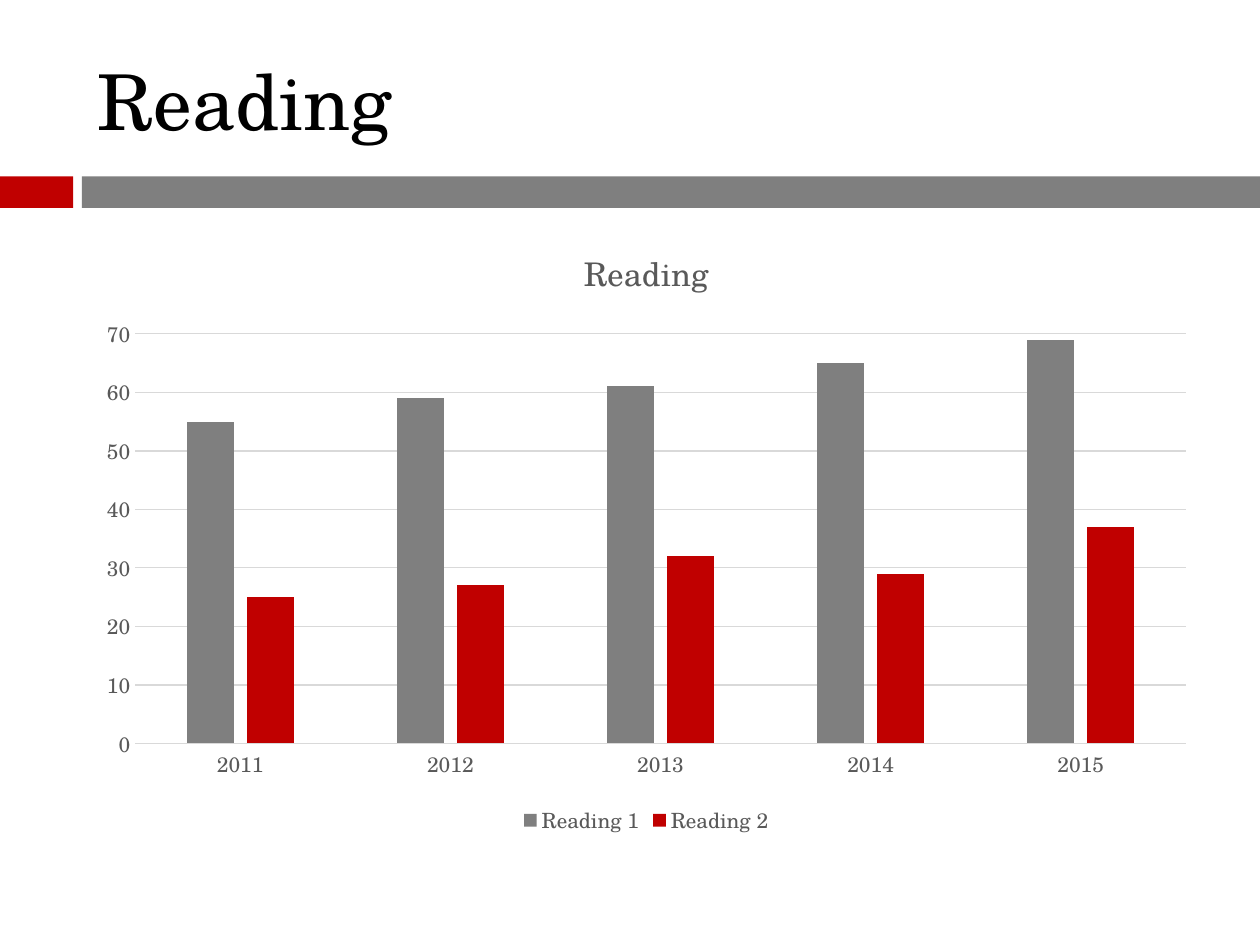
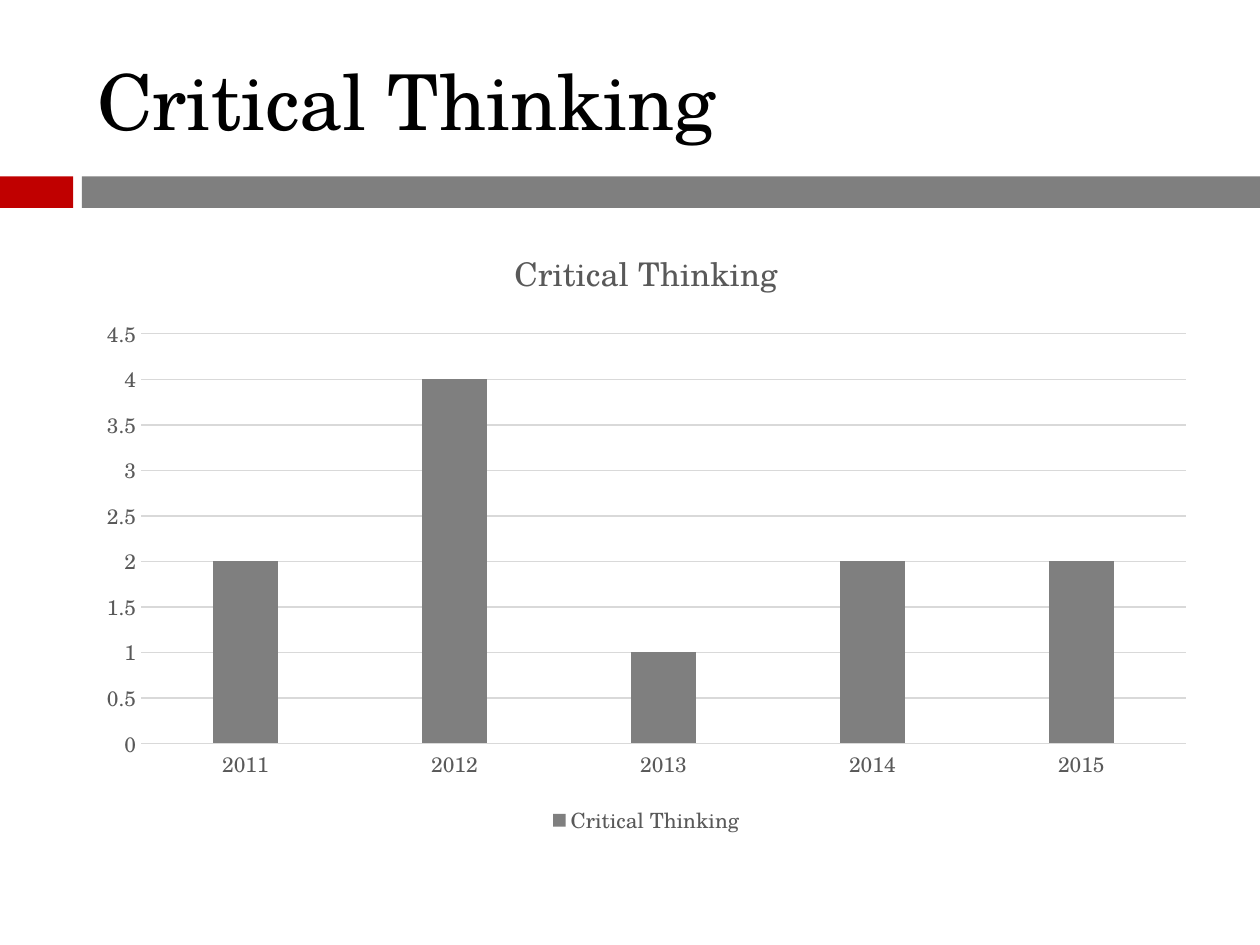
"""Build two slides of yearly assessment results as clustered column charts."""
from pptx import Presentation
from pptx.chart.data import CategoryChartData
from pptx.dml.color import RGBColor
from pptx.enum.chart import XL_CHART_TYPE, XL_LEGEND_POSITION, XL_TICK_MARK
from pptx.enum.shapes import MSO_SHAPE
from pptx.enum.text import MSO_ANCHOR, PP_ALIGN
from pptx.util import Inches, Pt

YEARS = ["2011", "2012", "2013", "2014", "2015"]
RESULTS = [
    {"title": "Reading", "top": 70, "step": 10,
     "series": {"Reading 1": (55, 59, 61, 65, 69),
                "Reading 2": (25, 27, 32, 29, 37)}},
    {"title": "Critical Thinking", "top": 4.5, "step": 0.5,
     "series": {"Critical Thinking": (2, 4, 1, 2, 2)}},
]

FONT = "TeX Gyre Schola"
BLACK = RGBColor(0x00, 0x00, 0x00)
RED = RGBColor(0xC0, 0x00, 0x00)
GRAY = RGBColor(0x7F, 0x7F, 0x7F)
LABEL = RGBColor(0x59, 0x59, 0x59)
GRID = RGBColor(0xD9, 0xD9, 0xD9)
SERIES_COLORS = (GRAY, RED)

CLUSTERED = XL_CHART_TYPE.COLUMN_CLUSTERED
BOTTOM = XL_LEGEND_POSITION.BOTTOM
NO_TICK = XL_TICK_MARK.NONE
RECTANGLE = MSO_SHAPE.RECTANGLE
MIDDLE = MSO_ANCHOR.MIDDLE
LEFT = PP_ALIGN.LEFT

WIDTH, HEIGHT = 10, 7.5
MARGIN, CONTENT_WIDTH = 0.67, 8.92
TITLE_TOP, TITLE_HEIGHT = 0.25, 1.08
CHART_TOP, CHART_HEIGHT = 1.75, 4.92
BAND_TOP, BAND_HEIGHT = 1.4, 0.25
BANDS = [(0, 0.58, RED), (0.65, WIDTH - 0.65, GRAY)]


def style_font(font, size, color):
    font.name, font.size, font.bold = FONT, Pt(size), False
    font.color.rgb = color


def style_line(line):
    line.color.rgb = GRID
    line.width = Pt(0.75)


def add_bands(slide):
    for left, width, color in BANDS:
        band = slide.shapes.add_shape(
            RECTANGLE, Inches(left), Inches(BAND_TOP), Inches(width), Inches(BAND_HEIGHT))
        band.shadow.inherit = False
        band.fill.solid()
        band.fill.fore_color.rgb = color
        band.line.fill.background()


def set_title(slide, text):
    title = slide.shapes.title
    title.left, title.top = Inches(MARGIN), Inches(TITLE_TOP)
    title.width, title.height = Inches(CONTENT_WIDTH), Inches(TITLE_HEIGHT)
    frame = title.text_frame
    frame.text = text
    frame.vertical_anchor = MIDDLE
    heading = frame.paragraphs[0]
    heading.alignment = LEFT
    style_font(heading.runs[0].font, 44, BLACK)


def add_results_chart(slide, result):
    data = CategoryChartData()
    data.categories = YEARS
    for name, scores in result["series"].items():
        data.add_series(name, scores)
    chart = slide.shapes.add_chart(
        CLUSTERED, Inches(MARGIN), Inches(CHART_TOP),
        Inches(CONTENT_WIDTH), Inches(CHART_HEIGHT), data).chart
    style_font(chart.font, 10, BLACK)

    chart.has_title = True
    caption = chart.chart_title.text_frame
    caption.text = result["title"]
    style_font(caption.paragraphs[0].runs[0].font, 18.6, LABEL)
    chart.chart_title.include_in_layout = False

    chart.has_legend = True
    chart.legend.position = BOTTOM
    chart.legend.include_in_layout = False
    style_font(chart.legend.font, 12, LABEL)

    years, scale = chart.category_axis, chart.value_axis
    for axis in (years, scale):
        axis.major_tick_mark = axis.minor_tick_mark = NO_TICK
        style_font(axis.tick_labels.font, 12, LABEL)
    style_line(years.format.line)
    scale.format.line.fill.background()
    scale.minimum_scale, scale.maximum_scale = 0, result["top"]
    scale.major_unit = result["step"]
    style_line(scale.major_gridlines.format.line)

    plot = chart.plots[0]
    plot.gap_width, plot.overlap = 219, -27
    plot.vary_by_categories = False
    for series, color in zip(plot.series, SERIES_COLORS):
        series.format.fill.solid()
        series.format.fill.fore_color.rgb = color


def main():
    deck = Presentation()
    deck.slide_width, deck.slide_height = Inches(WIDTH), Inches(HEIGHT)
    title_only = deck.slide_layouts.get_by_name("Title Only")
    for result in RESULTS:
        slide = deck.slides.add_slide(title_only)
        add_bands(slide)
        set_title(slide, result["title"])
        add_results_chart(slide, result)
    deck.save("out.pptx")


if __name__ == "__main__":
    main()
